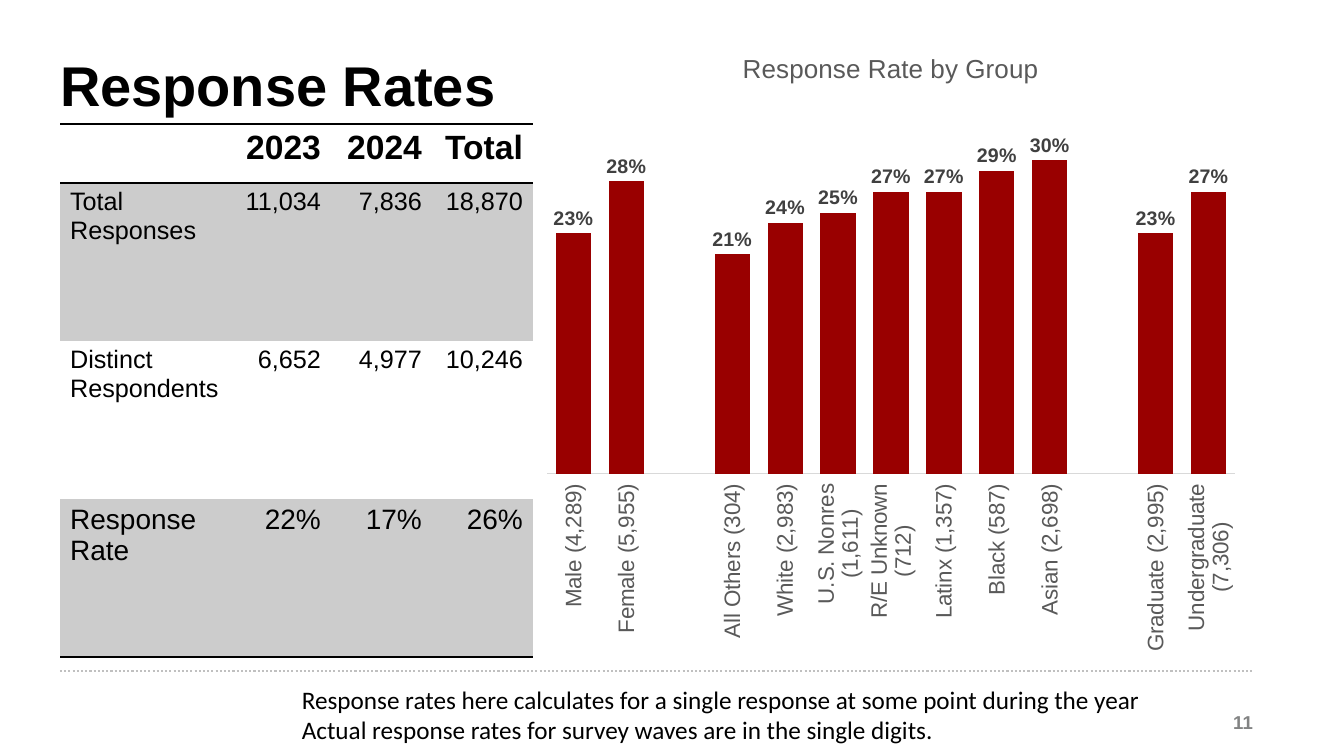
from lxml import etree
from pptx import Presentation
from pptx.chart.data import CategoryChartData
from pptx.dml.color import RGBColor
from pptx.enum.chart import XL_CHART_TYPE, XL_LABEL_POSITION, XL_TICK_LABEL_POSITION, XL_TICK_MARK
from pptx.enum.dml import MSO_LINE
from pptx.enum.shapes import MSO_CONNECTOR
from pptx.enum.text import MSO_ANCHOR, MSO_AUTO_SIZE, PP_ALIGN
from pptx.oxml import parse_xml
from pptx.oxml.ns import nsdecls, qn
from pptx.util import Emu, Pt

LEFT, RIGHT, CENTER = PP_ALIGN.LEFT, PP_ALIGN.RIGHT, PP_ALIGN.CENTER
MIDDLE = MSO_ANCHOR.MIDDLE
FIXED = MSO_AUTO_SIZE.NONE
COLUMNS = XL_CHART_TYPE.COLUMN_CLUSTERED
OUTSIDE = XL_LABEL_POSITION.OUTSIDE_END
LOW = XL_TICK_LABEL_POSITION.LOW
NO_TICK = XL_TICK_MARK.NONE
DOTTED = MSO_LINE.ROUND_DOT
STRAIGHT = MSO_CONNECTOR.STRAIGHT
NO_STYLE = "{2D5ABB26-0587-4C30-8999-92F81FD0307C}"

COLORS = {
    "text": "000000", "band": "CCCCCC", "bar": "990000", "label": "404040",
    "axis": "595959", "axis_line": "D9D9D9", "rule": "C0C0C0", "number": "828383",
}
TITLE = "Response Rates"
CHART_TITLE = "Response Rate by Group"
PAGE_NUMBER = "11"
NOTES = [
    "Response rates here calculates for a single response at some point during the year",
    "Actual response rates for survey waves are in the single digits.",
]
TABLE_ROWS = [
    ([""], "2023", "2024", "Total"),
    (["Total", "Responses"], "11,034", "7,836", "18,870"),
    (["Distinct Respondents"], "6,652", "4,977", "10,246"),
    (["Response", "Rate"], "22%", "17%", "26%"),
]
ROW_SIZES = [24, 18, 18, 20]
ROW_HEIGHTS = [59, 158, 158, 158]
COLUMN_WIDTHS = [170, 101, 101, 101]
RATES = [
    ("Male (4,289)", 0.23), ("Female (5,955)", 0.28), ("", None),
    ("All Others (304)", 0.21), ("White (2,983)", 0.24),
    ("U.S. Nonres\n(1,611)", 0.25), ("R/E Unknown\n(712)", 0.27),
    ("Latinx (1,357)", 0.27), ("Black (587)", 0.29), ("Asian (2,698)", 0.30),
    ("", None), ("Graduate (2,995)", 0.23), ("Undergraduate\n(7,306)", 0.27),
]
CHART_BOX = (532, 28, 717, 630)
PLOT_BOX = (547, 108, 688, 366)
CHART_TITLE_AT = (738, 46)


def px(value):
    return Emu(round(value * 914400 / 100.8))


def area(*box):
    return [px(value) for value in box]


def color(name):
    return RGBColor.from_string(COLORS[name])


def style(font, size, name="text", bold=False, face="Arial"):
    font.name, font.size, font.bold = face, Pt(size), bold
    font.color.rgb = color(name)


def write(frame, lines, size, name="text", bold=False, face="Arial", align=LEFT):
    for index, line in enumerate(lines):
        para = frame.add_paragraph() if index else frame.paragraphs[0]
        para.alignment = align
        span = para.add_run()
        span.text = line
        style(span.font, size, name, bold, face)


def add_text(page, box, lines, margins=None, **look):
    frame = page.shapes.add_textbox(*area(*box)).text_frame
    frame.word_wrap = True
    if margins:
        frame.margin_left = frame.margin_right = px(margins[0])
        frame.margin_top = frame.margin_bottom = px(margins[1])
    write(frame, lines, **look)
    return frame


def add_title(page):
    title = page.shapes.title
    title.left, title.top, title.width, title.height = area(60, 41, 1188, 94)
    frame = title.text_frame
    frame.auto_size = FIXED
    frame.vertical_anchor = MIDDLE
    frame.margin_left = frame.margin_right = frame.margin_top = frame.margin_bottom = 0
    write(frame, [TITLE], 40, bold=True)
    frame.paragraphs[0].line_spacing = 0.9


def add_borders(cell, borders):
    for index, (side, points) in enumerate(borders):
        cell.fill._xPr.insert(index, parse_xml(
            f'<a:{side} {nsdecls("a")} w="{Pt(points)}"><a:solidFill>'
            f'<a:srgbClr val="{COLORS["text"]}"/></a:solidFill></a:{side}>'))


def add_rate_table(page):
    box = (60, 124, sum(COLUMN_WIDTHS), sum(ROW_HEIGHTS))
    holder = page.shapes.add_table(len(TABLE_ROWS), len(COLUMN_WIDTHS), *area(*box))
    table = holder.table
    table.first_row = table.horz_banding = False
    next(holder._element.iter(qn("a:tableStyleId"))).text = NO_STYLE
    for column, width in zip(table.columns, COLUMN_WIDTHS):
        column.width = px(width)
    last = len(TABLE_ROWS) - 1
    borders = {0: [("lnT", 1), ("lnB", 1.5)], last: [("lnB", 1)]}
    for row, (label, *values) in enumerate(TABLE_ROWS):
        table.rows[row].height = px(ROW_HEIGHTS[row])
        for column, lines in enumerate([label] + [[value] for value in values]):
            cell = table.cell(row, column)
            if row % 2:
                cell.fill.solid()
                cell.fill.fore_color.rgb = color("band")
            else:
                cell.fill.background()
            add_borders(cell, borders.get(row, []))
            write(cell.text_frame, lines, ROW_SIZES[row], bold=row == 0,
                  align=RIGHT if column else LEFT)


def set_layout(parent, after, values, inner=False):
    for old in parent.findall(qn("c:layout")):
        parent.remove(old)
    layout = etree.Element(qn("c:layout"))
    manual = etree.SubElement(layout, qn("c:manualLayout"))
    settings = [("layoutTarget", "inner")] if inner else []
    settings += [("xMode", "edge"), ("yMode", "edge")]
    settings += [(key, f"{value:.4f}") for key, value in zip("xywh", values)]
    for key, value in settings:
        etree.SubElement(manual, qn(f"c:{key}")).set("val", value)
    parent.insert(after, layout)


def share(x, y, *size):
    left, top, width, height = CHART_BOX
    return [(x - left) / width, (y - top) / height] + [
        part / whole for part, whole in zip(size, (width, height))]


def add_rate_chart(page):
    data = CategoryChartData(number_format="0%")
    data.categories = [group for group, rate in RATES]
    data.add_series("Series 1", [rate for group, rate in RATES])
    chart = page.shapes.add_chart(COLUMNS, *area(*CHART_BOX), data).chart
    style(chart.font, 10)
    chart.has_legend = False
    chart.has_title = True
    write(chart.chart_title.text_frame, [CHART_TITLE], 18.6, "axis", align=CENTER)
    chart.chart_title.include_in_layout = False
    set_layout(chart.chart_title._element, 1, share(*CHART_TITLE_AT))
    set_layout(chart._chartSpace.chart.plotArea, 0, share(*PLOT_BOX), inner=True)

    groups, rates = chart.category_axis, chart.value_axis
    style(groups.tick_labels.font, 16, "axis")
    groups.tick_label_position = LOW
    groups.major_tick_mark = groups.minor_tick_mark = NO_TICK
    groups.format.line.color.rgb = color("axis_line")
    groups.format.line.width = Pt(0.75)
    turned = next(groups._element.iter(qn("a:bodyPr")))
    turned.set("rot", "-5400000")
    turned.set("vert", "horz")
    rates.minimum_scale, rates.maximum_scale = 0, 0.35
    rates.has_major_gridlines = False
    rates.visible = False

    plot = chart.plots[0]
    plot.gap_width, plot.overlap, plot.vary_by_categories = 50, -27, False
    bars = plot.series[0]
    bars.format.fill.solid()
    bars.format.fill.fore_color.rgb = color("bar")
    labels = bars.data_labels
    style(labels.font, 14, "label", bold=True)
    labels.show_value = True
    labels.number_format, labels.number_format_is_linked = "0%", False
    labels.position = OUTSIDE


def add_rule(page):
    rule = page.shapes.add_connector(STRAIGHT, *area(60, 671, 1252, 671))
    rule.line.color.rgb = color("rule")
    rule.line.width = Pt(1.5)
    rule.line.dash_style = DOTTED
    etree.SubElement(rule._element.spPr, qn("a:effectLst"))


def main():
    deck = Presentation()
    deck.slide_width, deck.slide_height = area(1344, 756)
    page = deck.slides.add_slide(deck.slide_layouts.get_by_name("Title Only"))
    add_rule(page)
    number = add_text(page, (964, 702, 302, 40), [PAGE_NUMBER], (13, 7),
                      size=13.3, name="number", bold=True, align=RIGHT)
    number.vertical_anchor = MIDDLE
    add_title(page)
    add_rate_table(page)
    add_rate_chart(page)
    add_text(page, (292, 679, 868, 72), NOTES, size=18, face="Calibri")
    deck.save("out.pptx")


if __name__ == "__main__":
    main()
